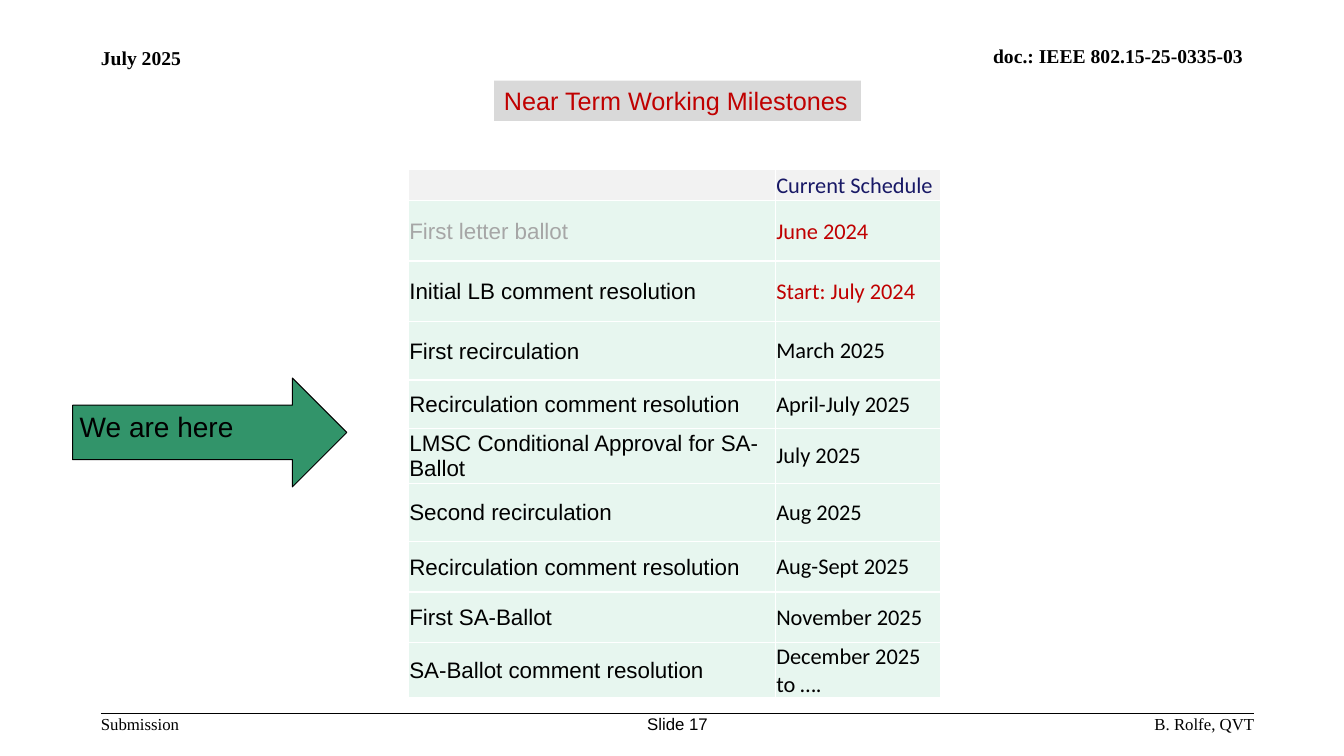
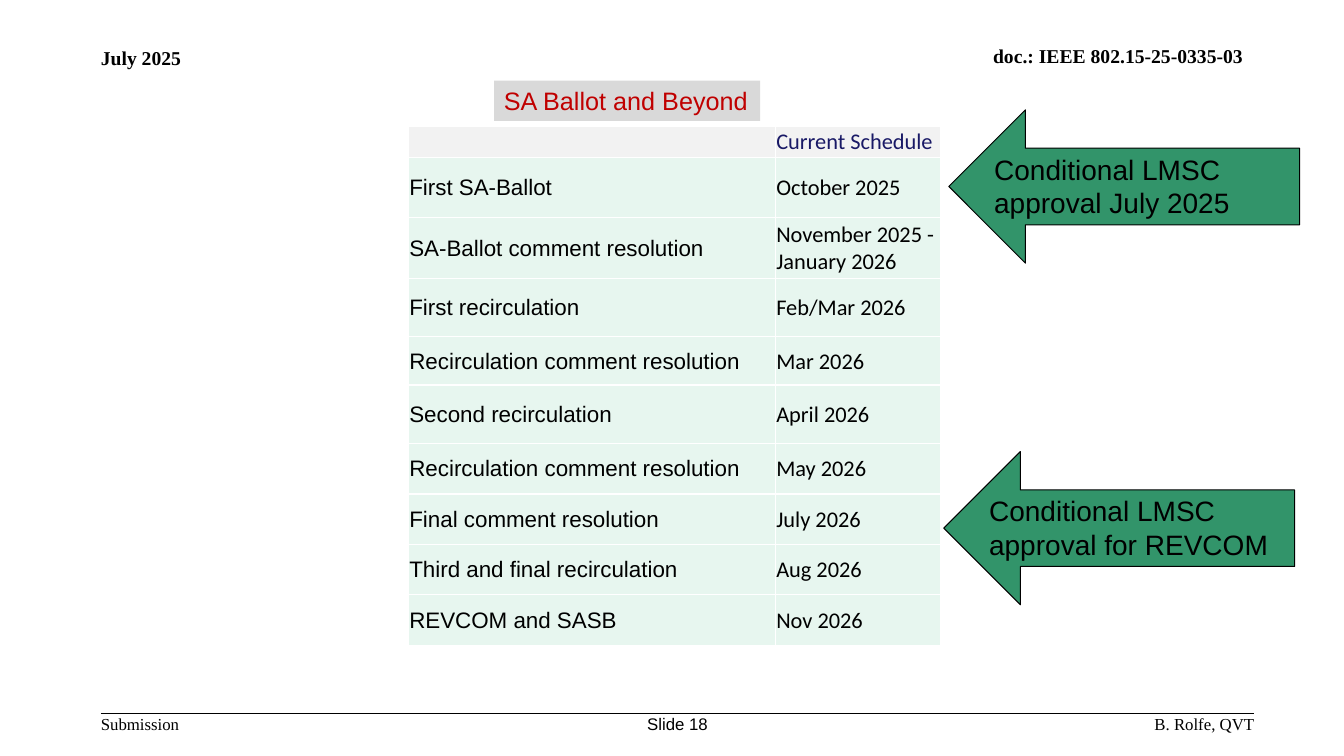
from lxml.etree import SubElement
from pptx import Presentation
from pptx.dml.color import RGBColor
from pptx.enum.shapes import MSO_CONNECTOR, MSO_SHAPE
from pptx.enum.text import MSO_ANCHOR, PP_ALIGN
from pptx.oxml.ns import qn
from pptx.util import Inches, Pt

COLORS = {
    "black": "000000", "white": "FFFFFF", "red": "C00000", "navy": "191966",
    "faded": "A6A6A6", "green": "32946A", "mint": "E7F6EF",
    "pale": "F2F2F2", "gray": "D9D9D9",
}
SANS, BODY, SERIF = "Arial", "Calibri", "Times New Roman"
LEFT, RIGHT = 1, 12.44
FOOT = 7.08

# Rows: task, date, height, and colours where they are not black
NEAR = [
    ("First letter ballot", "June 2024", 0.6, "faded", "red"),
    ("Initial LB comment resolution", "Start: July 2024", 0.6, "black", "red"),
    ("First recirculation", "March 2025", 0.58),
    ("Recirculation comment resolution", "April-July 2025", 0.48),
    ("LMSC Conditional Approval for SA-Ballot", "July 2025", 0.48),
    ("Second recirculation", "Aug 2025", 0.58),
    ("Recirculation comment resolution", "Aug-Sept 2025", 0.5),
    ("First SA-Ballot", "November 2025", 0.5),
    ("SA-Ballot comment resolution", "December 2025 to ….", 0.42),
]
BEYOND = [
    ("First SA-Ballot", "October 2025", 0.6),
    ("SA-Ballot comment resolution", "November 2025 - January 2026", 0.6),
    ("First recirculation", "Feb/Mar 2026", 0.58),
    ("Recirculation comment resolution", "Mar 2026", 0.48),
    ("Second recirculation", "April 2026", 0.58),
    ("Recirculation comment resolution", "May 2026", 0.5),
    ("Final comment resolution", "July 2026", 0.5),
    ("Third and final recirculation", "Aug 2026", 0.5),
    ("REVCOM and SASB", "Nov 2026", 0.5),
]


def rgb(name):
    return RGBColor.from_string(COLORS[name])


def paint(item, name):
    item.fill.solid()
    item.fill.fore_color.rgb = rgb(name)


def write(frame, text, size, font, color="black", bold=False,
          align=PP_ALIGN.LEFT):
    para = frame.paragraphs[0]
    para.alignment = align
    run = para.add_run()
    run.text = text
    run.font.size = Pt(size)
    run.font.name = font
    run.font.bold = bold
    run.font.color.rgb = rgb(color)


def inset(item, side, top, base):
    item.margin_left = item.margin_right = Inches(side)
    item.margin_top, item.margin_bottom = Inches(top), Inches(base)


def label(slide, text, box, size=12, font=SERIF, bold=False,
          align=PP_ALIGN.LEFT):
    frame = slide.shapes.add_textbox(*map(Inches, box)).text_frame
    frame.word_wrap = True
    inset(frame, 0, 0, 0)
    write(frame, text, size, font, bold=bold, align=align)


def block(slide, kind, box, fill):
    shape = slide.shapes.add_shape(kind, *map(Inches, box))
    shape.shadow.inherit = False
    paint(shape, fill)
    shape.text_frame.vertical_anchor = MSO_ANCHOR.TOP
    return shape


# Header, footer and title of every slide
def base(deck, number, title, width):
    slide = deck.slides.add_slide(deck.slide_layouts[6])
    label(slide, "July 2025", (LEFT, 0.46, 2.22, 0.24), 14, bold=True)
    label(slide, "doc.: IEEE 802.15-25-0335-03", (6.22, 0.44, 6.11, 0.24), 14,
          bold=True, align=PP_ALIGN.RIGHT)
    rule = slide.shapes.add_connector(
        MSO_CONNECTOR.STRAIGHT, *map(Inches, (LEFT, FOOT, RIGHT, FOOT)))
    rule.line.color.rgb = rgb("black")
    rule.line.width = Pt(1)
    SubElement(rule.element.spPr, qn("a:effectLst"))
    label(slide, "Submission", (LEFT, FOOT, 1.04, 0.2))
    label(slide, f"Slide {number}", (6.22, FOOT, 1, 0.2), font=SANS,
          align=PP_ALIGN.CENTER)
    label(slide, "B. Rolfe, QVT", (RIGHT - 3.22, FOOT, 3.22, 0.2),
          align=PP_ALIGN.RIGHT)

    band = block(slide, MSO_SHAPE.RECTANGLE, (4.9, 0.8, width, 0.4), "gray")
    band.line.fill.background()
    band.text_frame.word_wrap = False
    write(band.text_frame, title, 18, SANS, "red")
    return slide


def arrow(slide, kind, text, box):
    shape = block(slide, kind, box, "green")
    shape.line.color.rgb = rgb("black")
    shape.line.width = Pt(0.75)
    shape.text_frame.word_wrap = True
    inset(shape.text_frame, 0.07, 0.04, 0.04)
    write(shape.text_frame, text, 20, SANS)


# Schedule table
def edge(cell):
    props = cell._tc.get_or_add_tcPr()
    for side in ("a:lnL", "a:lnR", "a:lnT", "a:lnB"):
        line = SubElement(props, qn(side), w=str(Pt(1)))
        fill = SubElement(line, qn("a:solidFill"))
        SubElement(fill, qn("a:srgbClr"), val=COLORS["white"])


def fill_cell(cell, text, font, color, back):
    edge(cell)
    paint(cell, back)
    inset(cell, 0.01, 0.01, 0)
    cell.vertical_anchor = MSO_ANCHOR.MIDDLE
    write(cell.text_frame, text, 16, font, color)


def schedule(slide, top, tasks):
    rows = [("", "Current Schedule", 0.31, "black", "navy")] + tasks
    widths = (3.64, 1.64)
    total = sum(row[2] for row in rows)
    table = slide.shapes.add_table(
        len(rows), 2, *map(Inches, (4.05, top, sum(widths), total))).table
    table.first_row = table.horz_banding = False
    for col, width in zip(table.columns, widths):
        col.width = Inches(width)
    for i, (task, date, height, *tints) in enumerate(rows):
        table.rows[i].height = Inches(height)
        left, right = tints or ("black", "black")
        back = "mint" if i else "pale"
        fill_cell(table.cell(i, 0), task, SANS, left, back)
        fill_cell(table.cell(i, 1), date, BODY, right, back)


def main():
    deck = Presentation()
    deck.slide_width, deck.slide_height = Inches(13.33), Inches(7.5)

    # Near term
    slide = base(deck, 17, "Near Term Working Milestones", 3.64)
    arrow(slide, MSO_SHAPE.RIGHT_ARROW, "We are here", (0.72, 3.75, 2.72, 1.08))
    schedule(slide, 1.68, NEAR)

    # Ballot and after
    slide = base(deck, 18, "SA Ballot and Beyond", 2.64)
    schedule(slide, 1.25, BEYOND)
    for text, left, top in (
            ("Conditional LMSC approval for REVCOM", 9.36, 4.48),
            ("Conditional LMSC approval July 2025", 9.41, 1.09)):
        arrow(slide, MSO_SHAPE.LEFT_ARROW, text, (left, top, 3.48, 1.52))

    deck.save("out.pptx")


if __name__ == "__main__":
    main()
